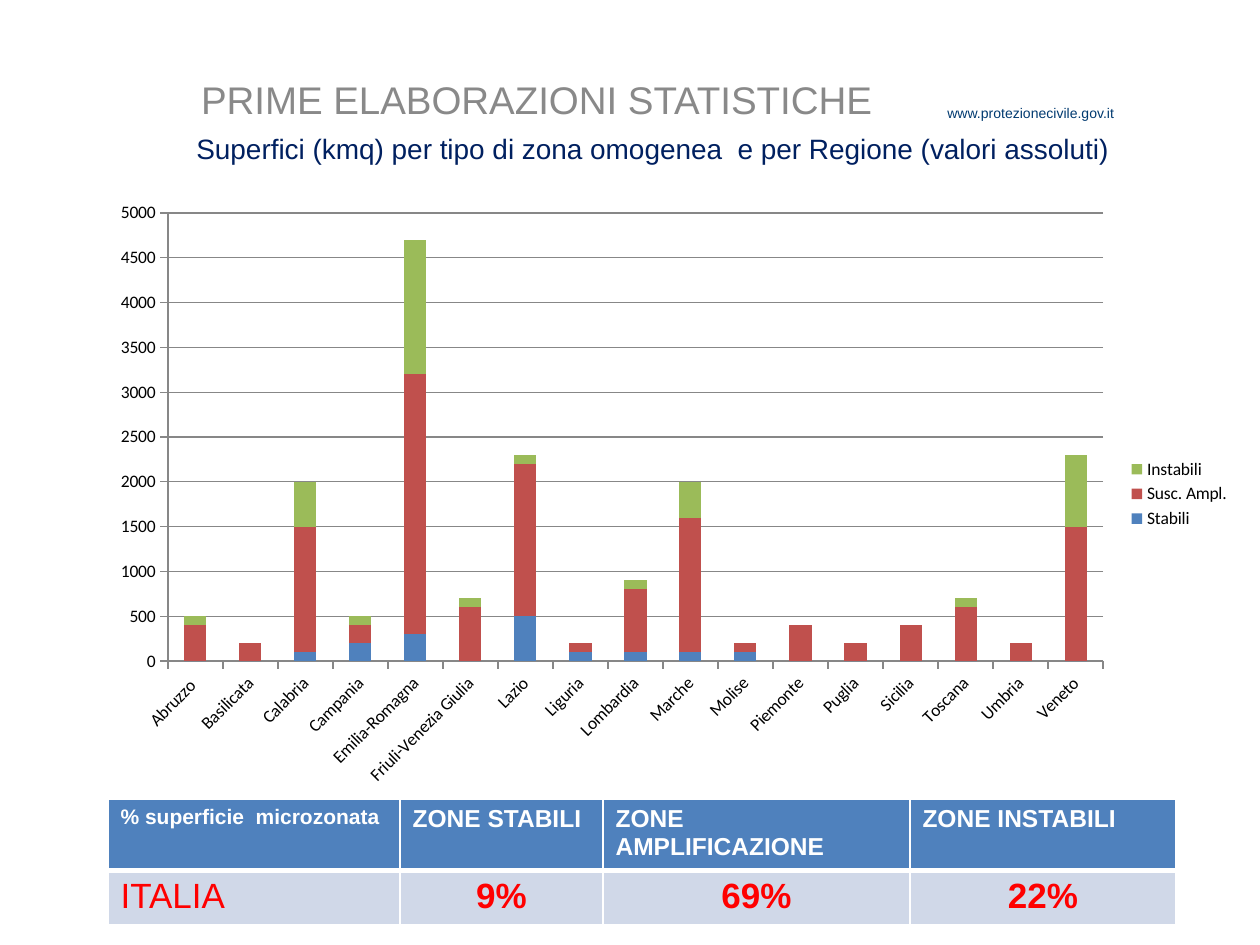
import lxml.etree
import pptx
import pptx.chart.data
import pptx.dml.color
import pptx.enum.chart
import pptx.enum.text
import pptx.oxml.ns
import pptx.util

SCALE = 914400 / 126
FACE = "Arial"
HUES = {
    "blue": "4F81BD", "red": "C0504D", "green": "9BBB59", "line": "878787",
    "grey": "898989", "navy": "002060", "link": "003A70", "pale": "D0D8E8",
    "white": "FFFFFF", "alert": "FF0000", "black": "000000",
}
ZONES = ["Abruzzo ", "Basilicata", "Calabria", "Campania", "Emilia-Romagna",
         "Friuli-Venezia Giulia", "Lazio", "Liguria", "Lombardia", "Marche",
         "Molise", "Piemonte", "Puglia", "Sicilia", "Toscana", "Umbria", "Veneto"]
AREAS = [
    ("Stabili", "blue", [0, 0, 100, 200, 300, 0, 500, 100, 100, 100,
                         100, 0, 0, 0, 0, 0, 0]),
    ("Susc. Ampl.", "red", [400, 200, 1400, 200, 2900, 600, 1700, 100, 700, 1500,
                            100, 400, 200, 400, 600, 200, 1500]),
    ("Instabili", "green", [100, 0, 500, 100, 1500, 100, 100, 0, 100, 400,
                            0, 0, 0, 0, 100, 0, 800]),
]
HEAD = ["% superficie  microzonata", "ZONE STABILI", "ZONE AMPLIFICAZIONE",
        "ZONE INSTABILI"]
SHARES = ["ITALIA", "9%", "69%", "22%"]


def px(num):
    """Turn px into EMU."""
    return pptx.util.Emu(round(num * SCALE))


def hue(name):
    """Return a named colour."""
    return pptx.dml.color.RGBColor.from_string(HUES[name])


def write(frame, text, size=12, color="black", bold=False, align="LEFT"):
    """Put one formatted paragraph into a text frame."""
    para = frame.paragraphs[0]
    para.alignment = getattr(pptx.enum.text.PP_ALIGN, align)
    run = para.add_run()
    run.text = text
    font = run.font
    font.name, font.size, font.bold = FACE, pptx.util.Pt(size), bold
    font.color.rgb = hue(color)


def label(slide, box, text, **form):
    """Add a text box with one line."""
    frame = slide.shapes.add_textbox(*map(px, box)).text_frame
    frame.word_wrap = True
    write(frame, text, **form)


def header(slide, box):
    """Place the title, web address and subtitle."""
    left, top, wide, high = box
    title = slide.shapes.title
    title.left, title.top = px(left + 5), px(top)
    title.width, title.height = px(741), px(58)
    frame = title.text_frame
    frame.auto_size = pptx.enum.text.MSO_AUTO_SIZE.NONE
    frame.vertical_anchor = pptx.enum.text.MSO_ANCHOR.TOP
    frame.margin_left = frame.margin_right = px(12)
    frame.margin_top = frame.margin_bottom = px(5)
    write(frame, "PRIME ELABORAZIONI STATISTICHE", size=22, color="grey")
    label(slide, (left + 751, top + 27, 215, 30), "www.protezionecivile.gov.it",
          size=8, color="link")
    label(slide, (left, top + high - 47, wide, 47),
          "Superfici (kmq) per tipo di zona omogenea  e per Regione (valori assoluti)",
          size=16, color="navy")


def graph(slide, box):
    """Place the stacked columns by region."""
    data = pptx.chart.data.CategoryChartData()
    data.categories = ZONES
    for name, _, vals in AREAS:
        data.add_series(name, vals)
    kind = pptx.enum.chart.XL_CHART_TYPE.COLUMN_STACKED
    chart = slide.shapes.add_chart(kind, *map(px, box), data).chart
    chart.has_title = False
    chart.font.name, chart.font.size = "Calibri", pptx.util.Pt(10)
    chart.font.color.rgb = hue("black")
    chart.has_legend = True
    chart.legend.position = pptx.enum.chart.XL_LEGEND_POSITION.RIGHT
    chart.legend.include_in_layout = False
    plot = chart.plots[0]
    plot.gap_width, plot.overlap, plot.vary_by_categories = 150, 100, False
    for series, (_, color, _) in zip(plot.series, AREAS):
        series.format.fill.solid()
        series.format.fill.fore_color.rgb = hue(color)
    scale = chart.value_axis
    scale.minimum_scale, scale.maximum_scale, scale.major_unit = 0, 5000, 500
    scale.has_major_gridlines = True
    for axis in (chart.category_axis, scale):
        axis.major_tick_mark = pptx.enum.chart.XL_TICK_MARK.OUTSIDE
    for part in (chart.category_axis, scale, scale.major_gridlines):
        part.format.line.color.rgb = hue("line")
        part.format.line.width = pptx.util.Pt(0.75)


def edge(cell, side, width):
    """Draw one white cell border."""
    tag = pptx.oxml.ns.qn
    props = cell._tc.get_or_add_tcPr()
    line = lxml.etree.SubElement(props, tag(f"a:ln{side}"), w=str(pptx.util.Pt(width)))
    fill = lxml.etree.SubElement(line, tag("a:solidFill"))
    lxml.etree.SubElement(fill, tag("a:srgbClr"), val=HUES["white"])


def shares(slide, box):
    """Place the table of shares by zone type."""
    table = slide.shapes.add_table(2, 4, *map(px, box)).table
    for col, wide in zip(table.columns, (292, 203, 307, 266)):
        col.width = px(wide)
    for row, high in zip(table.rows, (37, 50)):
        row.height = px(high)
    for r, texts in enumerate((HEAD, SHARES)):
        for c, text in enumerate(texts):
            cell = table.cell(r, c)
            for side in "LRTB":
                edge(cell, side, 3 if side == "BT"[r] else 1)
            cell.fill.solid()
            cell.fill.fore_color.rgb = hue("pale" if r else "blue")
            if r:
                form = {"size": 20, "color": "alert", "bold": c > 0,
                        "align": "CENTER" if c else "LEFT"}
            else:
                form = {"size": 14 if c else 12, "color": "white", "bold": True}
            write(cell.text_frame, text, **form)


def main():
    """Build the slide and save it."""
    deck = pptx.Presentation()
    deck.slide_width, deck.slide_height = px(1260), px(945)
    slide = deck.slides.add_slide(deck.slide_layouts[5])
    header(slide, (184, 71, 942, 101))
    shares(slide, (108, 799, 1068, 87))
    graph(slide, (98, 191, 1145, 606))
    deck.save("out.pptx")


if __name__ == "__main__":
    main()
